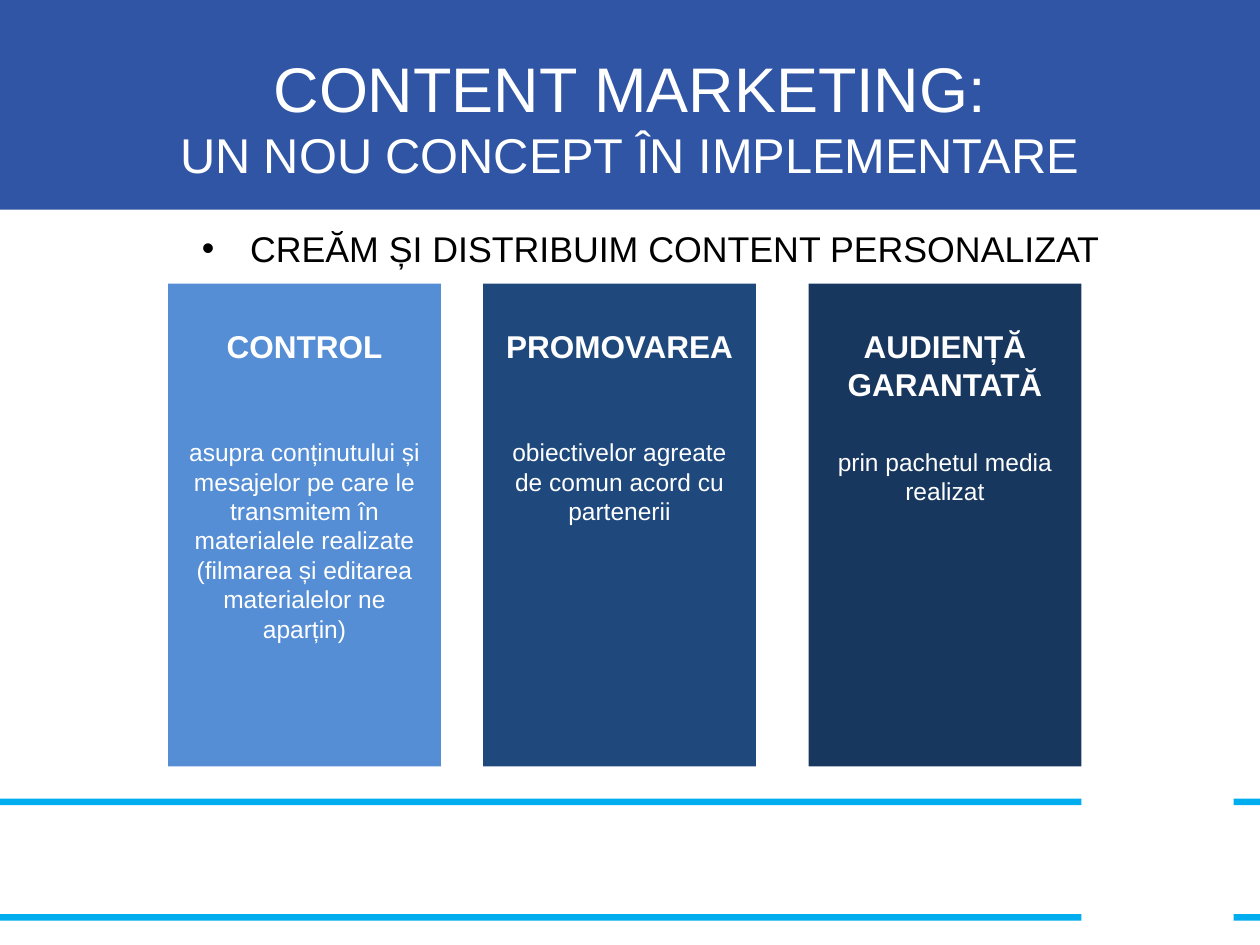
from lxml.etree import SubElement
from pptx import Presentation
from pptx.dml.color import RGBColor
from pptx.enum.shapes import MSO_SHAPE as Preset
from pptx.enum.text import MSO_ANCHOR as Anchor, PP_ALIGN as Align
from pptx.oxml.ns import qn
from pptx.util import Cm, Pt


def color(value):
    return RGBColor.from_string(value)


class SlideBuilder:
    """Holds the style and the current slide, and adds elements to it."""

    font = "Arial"
    white = "FFFFFF"
    black = "000000"
    banner = "3055A5"
    accent = "00ADEE"

    def __init__(self, slide):
        self.slide = slide

    def rectangle(self, left, top, width, height, fill):
        shape = self.slide.shapes.add_shape(
            Preset.RECTANGLE, Cm(left), Cm(top), Cm(width), Cm(height))
        shape.shadow.inherit = False
        shape.fill.solid()
        shape.fill.fore_color.rgb = color(fill)
        shape.line.fill.background()
        return shape

    def text_box(self, left, top, width, height, anchor):
        box = self.slide.shapes.add_textbox(Cm(left), Cm(top), Cm(width), Cm(height))
        box.text_frame.word_wrap = True
        box.text_frame.vertical_anchor = anchor
        return box.text_frame

    def run(self, paragraph, text, size, fill, bold=False):
        paragraph.alignment = Align.CENTER
        run = paragraph.add_run()
        run.text = text
        run.font.name = self.font
        run.font.size = Pt(size)
        run.font.bold = bold
        run.font.color.rgb = color(fill)

    def title(self, heading, subheading):
        paragraph = self.text_box(1.27, 0.76, 22.86, 3.18, Anchor.MIDDLE).paragraphs[0]
        self.run(paragraph, heading, 36, self.white)
        paragraph.add_line_break()
        self.run(paragraph, subheading, 27.9, self.white)

    def bullet(self, text):
        paragraph = self.text_box(1.27, 4.45, 23.7, 1.07, Anchor.TOP).paragraphs[0]
        properties = paragraph._p.get_or_add_pPr()
        properties.set("marL", str(Cm(0.97)))
        properties.set("indent", str(-Cm(0.97)))
        SubElement(properties, qn("a:buFont"), typeface=self.font)
        SubElement(properties, qn("a:buChar"), char="•")
        self.run(paragraph, text, 20.4, self.black)

    def panel(self, left, fill, headings, body, gap):
        frame = self.rectangle(left, 5.72, 5.5, 9.73, fill).text_frame
        frame.word_wrap = True
        frame.vertical_anchor = Anchor.TOP
        frame.margin_top = Cm(0.87)
        paragraph = frame.paragraphs[0]
        for heading in headings:
            self.run(paragraph, heading, 18, self.white, bold=True)
            paragraph = frame.add_paragraph()
        paragraph.space_before = Pt(gap)
        self.run(paragraph, body, 14, self.white)

    def rule(self, top):
        for left, width in ((0, 21.8), (24.87, 0.53)):
            self.rectangle(left, top, width, 0.13, self.accent)


def main():
    presentation = Presentation()
    presentation.slide_width = Cm(25.4)
    presentation.slide_height = Cm(19.05)
    builder = SlideBuilder(presentation.slides.add_slide(presentation.slide_layouts[6]))

    builder.rectangle(0, 0, 25.4, 4.23, builder.banner)
    for top in (16.1, 18.43):
        builder.rule(top)
    builder.title("CONTENT MARKETING:", "UN NOU CONCEPT ÎN IMPLEMENTARE")
    builder.bullet("CREĂM ȘI DISTRIBUIM CONTENT PERSONALIZAT")

    panels = (
        (3.39, "558ED5", ["CONTROL"],
         "asupra conținutului și mesajelor pe care le transmitem în materialele "
         "realizate (filmarea și editarea materialelor ne aparțin)", 41.4),
        (9.74, "1F497D", ["PROMOVAREA"],
         "obiectivelor agreate de comun acord cu partenerii", 41.4),
        (16.3, "17375E", ["AUDIENȚĂ", "GARANTATĂ"],
         "prin pachetul media realizat", 25.3),
    )
    for panel in panels:
        builder.panel(*panel)

    presentation.save("out.pptx")


if __name__ == "__main__":
    main()
